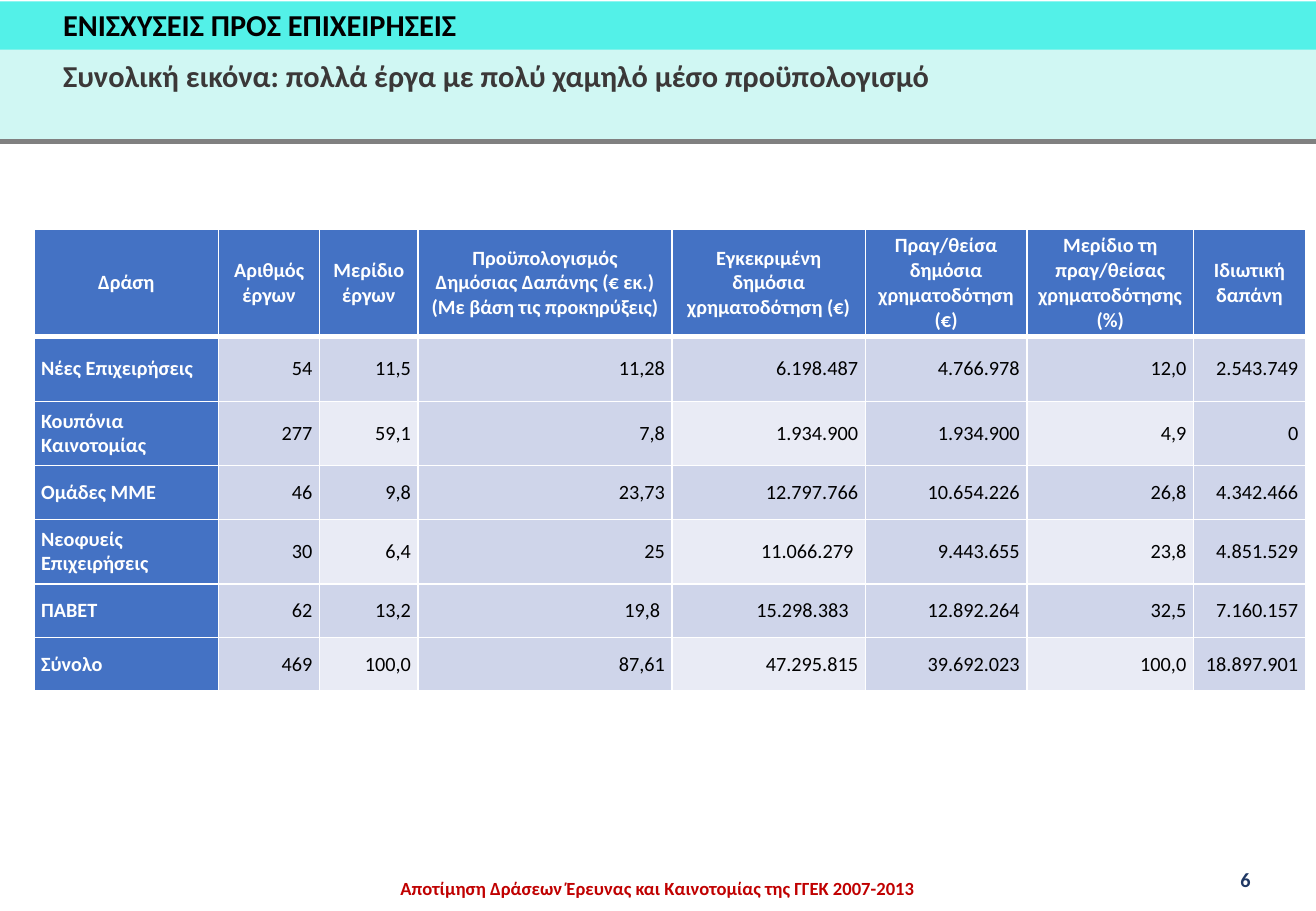
from lxml.etree import SubElement
from pptx import Presentation
from pptx.dml.color import RGBColor
from pptx.enum.shapes import MSO_CONNECTOR, MSO_SHAPE
from pptx.enum.text import MSO_ANCHOR, PP_ALIGN
from pptx.oxml.ns import qn
from pptx.util import Cm, Pt

COLORS = {
    "black": "000000", "white": "FFFFFF", "title_band": "53F1E8",
    "subtitle_band": "D0F7F3", "rule": "808080", "subtitle": "3B3838",
    "footer": "C00000", "page": "203864", "header": "4472C4",
    "body": "CFD5EA", "light": "E9EBF5",
}

HEADINGS = [
    "Δράση", "Αριθμός έργων", "Μερίδιο έργων",
    "Προϋπολογισμός\nΔημόσιας Δαπάνης (€ εκ.)\n(Με βάση τις προκηρύξεις)",
    "Εγκεκριμένη δημόσια χρηματοδότηση (€)",
    "Πραγ/θείσα δημόσια χρηματοδότηση (€)",
    "Μερίδιο τη πραγ/θείσας χρηματοδότησης (%)", "Ιδιωτική δαπάνη",
]
ACTIONS = [
    ["Νέες Επιχειρήσεις", "54", "11,5", "11,28", "6.198.487", "4.766.978", "12,0", "2.543.749"],
    ["Κουπόνια Καινοτομίας", "277", "59,1", "7,8", "1.934.900", "1.934.900", "4,9", "0"],
    ["Ομάδες ΜΜΕ", "46", "9,8", "23,73", "12.797.766", "10.654.226", "26,8", "4.342.466"],
    ["Νεοφυείς Επιχειρήσεις", "30", "6,4", "25", "11.066.279", "9.443.655", "23,8", "4.851.529"],
    ["ΠΑΒΕΤ", "62", "13,2", "19,8", "15.298.383", "12.892.264", "32,5", "7.160.157"],
    ["Σύνολο", "469", "100,0", "87,61", "47.295.815", "39.692.023", "100,0", "18.897.901"],
]
COLUMN_WIDTHS = [3.86, 2.11, 2.06, 5.31, 4.04, 3.38, 3.48, 2.34]
ROW_HEIGHTS = [2.24, 1.35, 1.35, 1.12, 1.35, 1.12, 1.12]
RIGHT_INDENTS = {(4, 4): 0.1, (5, 3): 0.1, (5, 4): 0.2}


def apply(target, values):
    for name, value in values.items():
        setattr(target, name, value)


class SlideBuilder:
    font_name = "Calibri"

    def __init__(self, slide):
        self.slide = slide

    def color(self, name):
        return RGBColor.from_string(COLORS[name])

    def fill(self, target, color):
        target.fill.solid()
        target.fill.fore_color.rgb = self.color(color)

    def set_text(self, frame, text, size, color, bold=True, **paragraph_format):
        frame.text = text
        for paragraph in frame.paragraphs:
            apply(paragraph, paragraph_format)
            apply(paragraph.font, {"name": self.font_name, "size": Pt(size), "bold": bold})
            paragraph.font.color.rgb = self.color(color)

    def band(self, top, height, color):
        band = self.slide.shapes.add_shape(
            MSO_SHAPE.RECTANGLE, Cm(0), Cm(top), Cm(27.51), Cm(height))
        band.shadow.inherit = False
        self.fill(band, color)
        band.line.fill.background()

    def rule(self, top, color, width):
        rule = self.slide.shapes.add_connector(
            MSO_CONNECTOR.STRAIGHT, Cm(0), Cm(top), Cm(27.51), Cm(top))
        rule.line.color.rgb = self.color(color)
        rule.line.width = Pt(width)
        SubElement(rule._element.spPr, qn("a:effectLst"))

    def label(self, box, text, size, color, frame_format=None, **paragraph_format):
        frame = self.slide.shapes.add_textbox(*map(Cm, box)).text_frame
        apply(frame, {"word_wrap": True, **(frame_format or {})})
        self.set_text(frame, text, size, color, **paragraph_format)

    def borders(self, cell, top, bottom):
        properties = cell._tc.get_or_add_tcPr()
        for side, width in {"L": 1, "R": 1, "T": top, "B": bottom}.items():
            line = SubElement(properties, qn(f"a:ln{side}"), w=str(Pt(width)))
            paint = SubElement(line, qn("a:solidFill"))
            SubElement(paint, qn("a:srgbClr"), val=COLORS["white"])

    def cell(self, cell, row, column, text):
        self.borders(cell, 3 if row == 1 else 1, 3 if row == 0 else 1)
        apply(cell, {
            "vertical_anchor": MSO_ANCHOR.MIDDLE,
            "margin_left": Cm(0.15),
            "margin_right": Cm(0.15 + RIGHT_INDENTS.get((row, column), 0)),
            "margin_top": 0, "margin_bottom": 0,
        })
        heading = row == 0 or column == 0
        striped = row % 2 == 0 and column % 2 == 0
        self.fill(cell, "header" if heading else "light" if striped else "body")
        if row == 0:
            alignment = PP_ALIGN.CENTER
        else:
            alignment = PP_ALIGN.RIGHT if column else PP_ALIGN.LEFT
        self.set_text(cell.text_frame, text, 12, "white" if heading else "black",
                      bold=heading, alignment=alignment)

    def table(self, left, top, rows):
        table = self.slide.shapes.add_table(
            len(rows), len(COLUMN_WIDTHS), Cm(left), Cm(top),
            Cm(sum(COLUMN_WIDTHS)), Cm(sum(ROW_HEIGHTS))).table
        apply(table, {"first_row": True, "first_col": True, "horz_banding": False})
        for column, width in zip(table.columns, COLUMN_WIDTHS):
            column.width = Cm(width)
        for row, height in zip(table.rows, ROW_HEIGHTS):
            row.height = Cm(height)
        for row, texts in enumerate(rows):
            for column, text in enumerate(texts):
                self.cell(table.cell(row, column), row, column, text)


def main():
    deck = Presentation()
    apply(deck, {"slide_width": Cm(27.51), "slide_height": Cm(19.05)})
    page = SlideBuilder(deck.slides.add_slide(deck.slide_layouts[6]))
    no_margins = dict.fromkeys(
        ["margin_left", "margin_right", "margin_top", "margin_bottom"], 0)

    page.label((7.16, 17.91, 13.18, 0.97),
               "Aποτίμηση Δράσεων Έρευνας και Καινοτομίας της ΓΓΕΚ 2007-2013",
               11, "footer", no_margins, alignment=PP_ALIGN.CENTER, line_spacing=Pt(25.3))
    page.label((25.68, 18.01, 1.32, 0.76), "6", 12, "page")
    page.band(0.03, 1.02, "title_band")
    page.band(1.04, 1.9, "subtitle_band")
    page.rule(2.95, "rule", 3)
    page.table(0.71, 4.8, [HEADINGS, *ACTIONS])
    page.label((1.07, 1.07, 22.53, 1.02),
               "Συνολική εικόνα: πολλά έργα με πολύ χαμηλό μέσο προϋπολογισμό",
               18, "subtitle")
    page.label((1.07, 0, 8.81, 1.02), "ΕΝΙΣΧΥΣΕΙΣ ΠΡΟΣ ΕΠΙΧΕΙΡΗΣΕΙΣ", 18, "black",
               {"word_wrap": False})
    deck.save("out.pptx")


if __name__ == "__main__":
    main()
